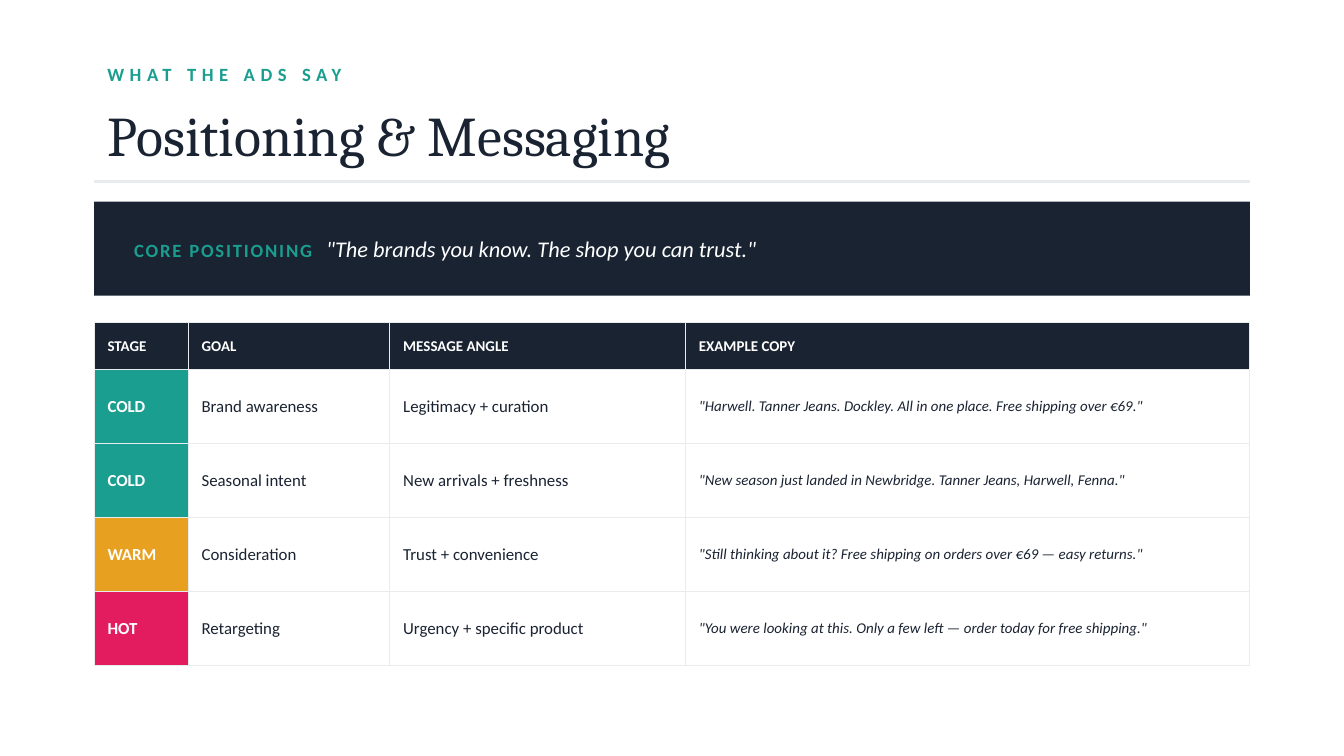
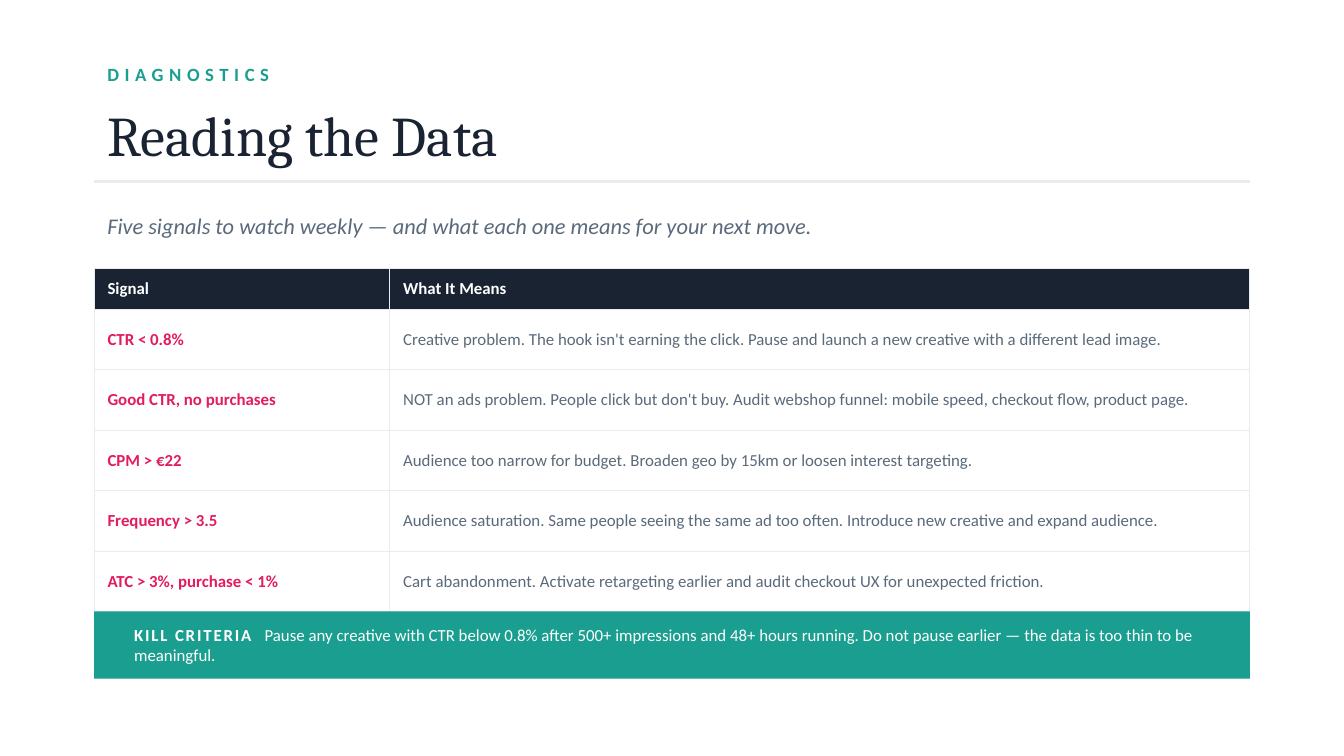
from lxml import etree
from pptx import Presentation
from pptx.dml.color import RGBColor
from pptx.enum.shapes import MSO_CONNECTOR, MSO_SHAPE
from pptx.enum.text import MSO_ANCHOR, MSO_AUTO_SIZE, PP_ALIGN
from pptx.oxml.ns import qn
from pptx.util import Emu, Pt

RECTANGLE, STRAIGHT = MSO_SHAPE.RECTANGLE, MSO_CONNECTOR.STRAIGHT
MIDDLE, LEFT_ALIGN, NO_FIT = MSO_ANCHOR.MIDDLE, PP_ALIGN.LEFT, MSO_AUTO_SIZE.NONE

# Shared look; 200 px to the inch
PX = 4572
PAGE_WIDTH, PAGE_HEIGHT = 2000, 1125
LEFT, WIDTH = 140, 1720
BAND_INSET = 40
TITLE_ONLY = 5
NAVY, TEAL, AMBER, PINK = "1A2332", "1A9E8F", "E8A020", "E31C5F"
GREY, RULE, WHITE = "5A6A7A", "E8ECEF", "FFFFFF"
BODY_FONT, TITLE_FONT = "Calibri", "Cambria"

# Text styles
KICKER = dict(size=10, color=TEAL, bold=True, spacing=3)
TITLE = dict(size=30, color=NAVY, name=TITLE_FONT)
LEAD = dict(size=12, color=GREY, italic=True)
CORE_LABEL = dict(size=10, color=TEAL, bold=True, spacing=1)
CORE_QUOTE = dict(size=12, color=WHITE, italic=True)
KILL_LABEL = dict(size=9, color=WHITE, bold=True, spacing=1)
KILL_TEXT = dict(size=9, color=WHITE)
SMALL_HEAD = dict(size=8, color=WHITE, bold=True)
HEAD = dict(size=9, color=WHITE, bold=True)
CELL = dict(size=9, color=NAVY)
QUOTE = dict(size=8, color=NAVY, italic=True)
SIGNAL = dict(size=9, color=PINK, bold=True)
MEANING = dict(size=9, color=GREY)

# Content
STAGE_FILLS = {"COLD": TEAL, "WARM": AMBER, "HOT": PINK}
MESSAGES = [
    ("STAGE", "GOAL", "MESSAGE ANGLE", "EXAMPLE COPY"),
    ("COLD", "Brand awareness", "Legitimacy + curation",
     '"Harwell. Tanner Jeans. Dockley. All in one place. Free shipping over €69."'),
    ("COLD", "Seasonal intent", "New arrivals + freshness",
     '"New season just landed in Newbridge. Tanner Jeans, Harwell, Fenna."'),
    ("WARM", "Consideration", "Trust + convenience",
     '"Still thinking about it? Free shipping on orders over €69 — easy returns."'),
    ("HOT", "Retargeting", "Urgency + specific product",
     '"You were looking at this. Only a few left — order today for free shipping."'),
]
SIGNALS = [
    ("Signal", "What It Means"),
    ("CTR < 0.8%", "Creative problem. The hook isn't earning the click. "
     "Pause and launch a new creative with a different lead image."),
    ("Good CTR, no purchases", "NOT an ads problem. People click but don't buy. "
     "Audit webshop funnel: mobile speed, checkout flow, product page."),
    ("CPM > €22", "Audience too narrow for budget. "
     "Broaden geo by 15km or loosen interest targeting."),
    ("Frequency > 3.5", "Audience saturation. Same people seeing the same ad too often. "
     "Introduce new creative and expand audience."),
    ("ATC > 3%, purchase < 1%", "Cart abandonment. "
     "Activate retargeting earlier and audit checkout UX for unexpected friction."),
]
CORE = [
    ("CORE POSITIONING  ", CORE_LABEL),
    ('"The brands you know. The shop you can trust."', CORE_QUOTE),
]
KILL = [
    ("KILL CRITERIA  ", KILL_LABEL),
    ("Pause any creative with CTR below 0.8% after 500+ impressions and 48+ hours running. "
     "Do not pause earlier — the data is too thin to be meaningful.", KILL_TEXT),
]


def px(*lengths):
    return [Emu(length * PX) for length in lengths]


def rgb(color):
    return RGBColor.from_string(color)


def set_font(font, size, color, name=BODY_FONT, bold=False, italic=False):
    font.size, font.name = Pt(size), name
    font.bold, font.italic = bold, italic
    font.color.rgb = rgb(color)


def write(frame, spans):
    """Fill the first paragraph with (text, style) spans."""
    para = frame.paragraphs[0]
    para.alignment = LEFT_ALIGN
    for text, style in spans:
        span = para.add_run()
        span.text = text
        look = dict(style)
        spacing = look.pop("spacing", 0)
        set_font(para.font if len(spans) == 1 else span.font, **look)
        if spacing:
            span._r.get_or_add_rPr().set("spc", str(spacing * 100))


def set_text(box, spans):
    frame = box.text_frame
    frame.word_wrap = True
    frame.auto_size = NO_FIT
    frame.vertical_anchor = MIDDLE
    write(frame, spans)


def add_text(page, left, top, width, height, spans):
    set_text(page.shapes.add_textbox(*px(left, top, width, height)), spans)


def add_page(deck, kicker, heading):
    """Page with kicker, title and the rule below it."""
    page = deck.slides.add_slide(deck.slide_layouts[TITLE_ONLY])
    add_text(page, LEFT, 80, 800, 60, [(kicker, KICKER)])
    title = page.shapes.title
    title.left, title.top, title.width, title.height = px(LEFT, 140, 1600, 120)
    set_text(title, [(heading, TITLE)])
    rule = page.shapes.add_connector(STRAIGHT, *px(LEFT, 270, LEFT + WIDTH, 270))
    rule.line.color.rgb = rgb(RULE)
    rule.line.width = Pt(1.5)
    etree.SubElement(rule._element.spPr, qn("a:effectLst"))
    return page


def add_band(page, top, height, color, spans):
    band = page.shapes.add_shape(RECTANGLE, *px(LEFT, top, WIDTH, height))
    band.shadow.inherit = False
    band.fill.solid()
    band.fill.fore_color.rgb = rgb(color)
    band.line.fill.background()
    add_text(page, LEFT + BAND_INSET, top, WIDTH - 2 * BAND_INSET, height, spans)


def add_borders(cell):
    properties = cell._tc.get_or_add_tcPr()
    for side in ("a:lnL", "a:lnR", "a:lnT", "a:lnB"):
        line = etree.SubElement(properties, qn(side), w=str(Pt(0.5)))
        fill = etree.SubElement(line, qn("a:solidFill"))
        etree.SubElement(fill, qn("a:srgbClr"), val=RULE)


def add_grid(page, top, widths, head_height, row_height, rows, head, styles, fills):
    """Table with a navy head row; fills maps a cell text to its fill."""
    heights = [head_height] + [row_height] * (len(rows) - 1)
    table = page.shapes.add_table(
        len(rows), len(widths), *px(LEFT, top, WIDTH, sum(heights))).table
    table.first_row = table.horz_banding = False
    for column, width in zip(table.columns, px(*widths)):
        column.width = width
    for row, height in zip(table.rows, px(*heights)):
        row.height = height
    for r, texts in enumerate(rows):
        for c, text in enumerate(texts):
            cell = table.cell(r, c)
            cell.vertical_anchor = MIDDLE
            add_borders(cell)
            color = NAVY if r == 0 else fills.get(text)
            if color:
                cell.fill.solid()
                cell.fill.fore_color.rgb = rgb(color)
            else:
                cell.fill.background()
            write(cell.text_frame, [(text, head if r == 0 else styles[c])])


def main():
    deck = Presentation()
    deck.slide_width, deck.slide_height = px(PAGE_WIDTH, PAGE_HEIGHT)

    # Messaging by funnel stage
    page = add_page(deck, "WHAT THE ADS SAY", "Positioning & Messaging")
    add_band(page, 300, 140, NAVY, CORE)
    add_grid(page, 480, (140, 300, 440, 840), 70, 110, MESSAGES,
             SMALL_HEAD, (HEAD, CELL, CELL, QUOTE), STAGE_FILLS)

    # Weekly signals
    page = add_page(deck, "DIAGNOSTICS", "Reading the Data")
    add_text(page, LEFT, 300, WIDTH, 70, [
        ("Five signals to watch weekly — and what each one means for your next move.", LEAD)])
    add_grid(page, 400, (440, 1280), 60, 90, SIGNALS, HEAD, (SIGNAL, MEANING), {})
    add_band(page, 910, 100, TEAL, KILL)

    deck.save("out.pptx")


if __name__ == "__main__":
    main()
